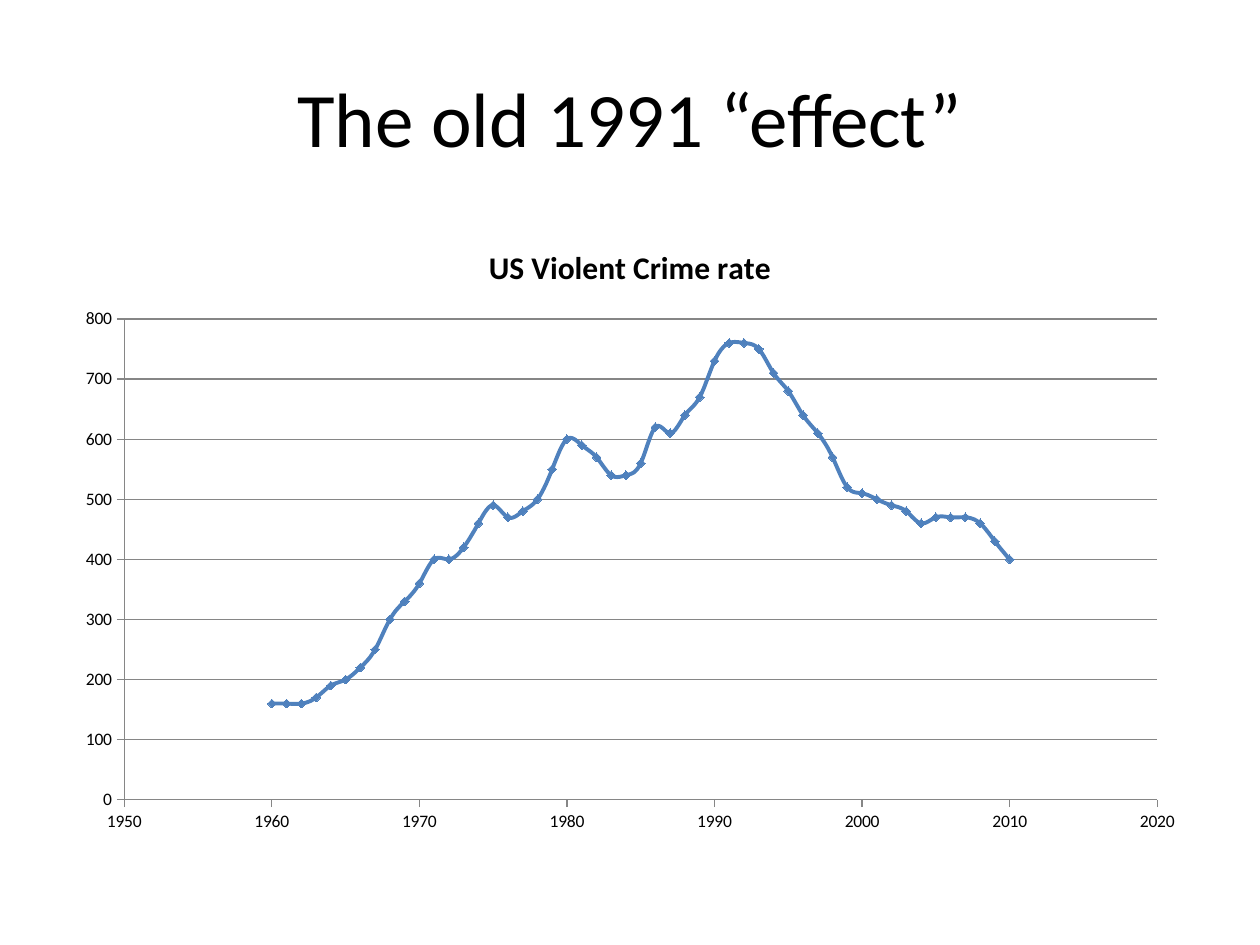
from lxml import etree
from pptx import Presentation
from pptx.chart.data import XyChartData
from pptx.dml.color import RGBColor
from pptx.enum.chart import XL_CHART_TYPE, XL_MARKER_STYLE, XL_TICK_MARK
from pptx.enum.text import MSO_ANCHOR, PP_ALIGN
from pptx.oxml.ns import qn
from pptx.util import Pt

SMOOTH = XL_CHART_TYPE.XY_SCATTER_SMOOTH
DIAMOND = XL_MARKER_STYLE.DIAMOND
OUT, NONE = XL_TICK_MARK.OUTSIDE, XL_TICK_MARK.NONE

TITLE = "The old 1991 “effect”"
CHART_TITLE = "US Violent Crime rate"
FIRST_YEAR = 1960
RATES = [
    160, 160, 160, 170, 190, 200, 220, 250, 300, 330,
    360, 400, 400, 420, 460, 490, 470, 480, 500, 550,
    600, 590, 570, 540, 540, 560, 620, 610, 640, 670,
    730, 760, 760, 750, 710, 680, 640, 610, 570, 520,
    510, 500, 490, 480, 460, 470, 470, 470, 460, 430,
    400,
]
FONT, BLACK, BLUE, GREY = "Calibri", "000000", "4F81BD", "868686"
LEFT, TOP, WIDTH, HEIGHT = 36, 126, 648, 356.4
# Plot area inside the chart, in points
PLOT = {"x": 35, "y": 56.3, "w": 590.3, "h": 274.8}


def color(code):
    return RGBColor.from_string(code)


def style(font, size, bold=False):
    font.name, font.size, font.bold = FONT, Pt(size), bold
    font.color.rgb = color(BLACK)


def rule(line, code, width):
    line.color.rgb = color(code)
    line.width = Pt(width)


def scale(axis, low, high, step):
    axis.minimum_scale, axis.maximum_scale = low, high
    axis.major_unit = step
    axis.major_tick_mark, axis.minor_tick_mark = OUT, NONE
    rule(axis.format.line, GREY, 0.75)
    style(axis.tick_labels.font, 10)


def place_plot(chart):
    """Fix the inner plot area as fractions of the chart."""
    area = chart.plots[0]._element.getparent()
    old = area.find(qn("c:layout"))
    if old is not None:
        area.remove(old)
    layout = etree.Element(qn("c:layout"))
    area.insert(0, layout)
    manual = etree.SubElement(layout, qn("c:manualLayout"))
    parts = {"layoutTarget": "inner", "xMode": "edge", "yMode": "edge"}
    for name, size in PLOT.items():
        parts[name] = size / (WIDTH if name in "xw" else HEIGHT)
    for name, val in parts.items():
        etree.SubElement(manual, qn("c:" + name)).set("val", str(val))


def bend(curve):
    """Smooth a scatter series, which has no public switch for it."""
    node = curve._element.find(qn("c:smooth"))
    if node is None:
        node = etree.SubElement(curve._element, qn("c:smooth"))
    node.set("val", "1")


def add_title(slide):
    title = slide.shapes.title
    title.left, title.top, title.width, title.height = map(Pt, (36, 21.6, 648, 90))
    frame = title.text_frame
    frame.text = TITLE
    frame.vertical_anchor = MSO_ANCHOR.MIDDLE
    frame.paragraphs[0].alignment = PP_ALIGN.CENTER
    style(frame.paragraphs[0].font, 44)


def add_plot(slide):
    data = XyChartData()
    points = data.add_series(CHART_TITLE)
    for year, rate in enumerate(RATES, FIRST_YEAR):
        points.add_data_point(year, rate)
    box = map(Pt, (LEFT, TOP, WIDTH, HEIGHT))
    chart = slide.shapes.add_chart(SMOOTH, *box, data).chart
    style(chart.font, 10)
    chart.has_legend = False
    chart.has_title = True
    head = chart.chart_title.text_frame
    head.text = CHART_TITLE
    style(head.paragraphs[0].font, 18, True)
    chart.chart_title.include_in_layout = False

    scale(chart.category_axis, 1950, 2020, 10)
    scale(chart.value_axis, 0, 800, 100)
    chart.category_axis.has_major_gridlines = False
    chart.value_axis.has_major_gridlines = True
    rule(chart.value_axis.major_gridlines.format.line, GREY, 0.75)

    chart.plots[0].vary_by_categories = False
    curve = chart.plots[0].series[0]
    bend(curve)
    rule(curve.format.line, BLUE, 2.25)
    mark = curve.marker
    mark.style, mark.size = DIAMOND, 5
    mark.format.fill.solid()
    mark.format.fill.fore_color.rgb = color(BLUE)
    rule(mark.format.line, BLUE, 0.75)
    place_plot(chart)


def main():
    deck = Presentation()
    deck.slide_width, deck.slide_height = Pt(720), Pt(540)
    slide = deck.slides.add_slide(deck.slide_layouts[5])
    add_title(slide)
    add_plot(slide)
    deck.save("out.pptx")


if __name__ == "__main__":
    main()
